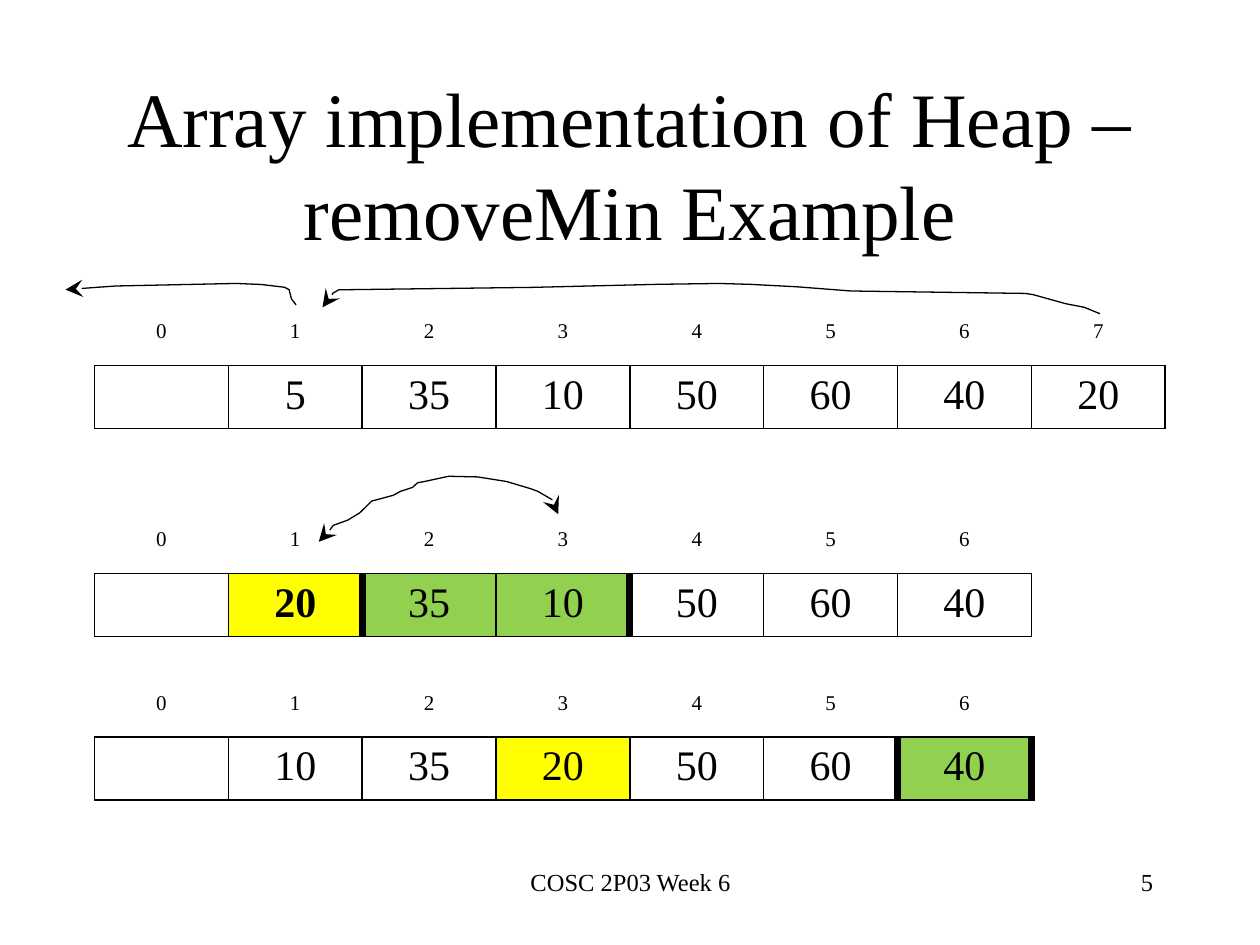
import pptx
import pptx.util
import pptx.dml.color
import pptx.enum.text
import pptx.oxml.ns
from lxml import etree

BLACK = pptx.dml.color.RGBColor(0, 0, 0)
YELLOW = pptx.dml.color.RGBColor(0xFF, 0xFF, 0)
GREEN = pptx.dml.color.RGBColor(0x92, 0xD0, 0x50)
FONT = "Times New Roman"
Align = pptx.enum.text.PP_ALIGN
Anchor = pptx.enum.text.MSO_ANCHOR
inches = pptx.util.Inches
qn = pptx.oxml.ns.qn

WIDTH, HEIGHT = 10, 7.5
MARGIN = 0.075 * WIDTH
COLUMN = (WIDTH - 2 * MARGIN) / 8
INDEX_ROW, VALUE_ROW = 0.41, 0.47
THIN, THICK = 1, 4.5


def write(frame, text, size, align, bold=False):
    para = frame.paragraphs[0]
    para.alignment = align
    span = para.add_run()
    span.text = text
    span.font.name = FONT
    span.font.size = pptx.util.Pt(size)
    span.font.bold = bold
    span.font.color.rgb = BLACK


def add_label(page, box, text, size, align, anchor=Anchor.TOP):
    shape = page.shapes.add_textbox(*map(inches, box))
    frame = shape.text_frame
    frame.word_wrap = True
    frame.vertical_anchor = anchor
    write(frame, text, size, align)


def set_border(cell, side, points):
    """Draw one side of a cell, or hide it when points is 0."""
    line = etree.SubElement(cell._tc.get_or_add_tcPr(), qn("a:ln" + side))
    line.set("w", str(pptx.util.Pt(points)))
    if points:
        fill = etree.SubElement(line, qn("a:solidFill"))
        etree.SubElement(fill, qn("a:srgbClr")).set("val", str(BLACK))
    else:
        etree.SubElement(line, qn("a:noFill"))


def paint(cell, color):
    if color is None:
        cell.fill.background()
    else:
        cell.fill.solid()
        cell.fill.fore_color.rgb = color


def add_array(page, left, top, values, fills, thick_edges=(), bold=()):
    """Indices above a row of framed values; edge n is left of column n."""
    count = len(values)
    box = (left, top, count * COLUMN, INDEX_ROW + VALUE_ROW)
    table = page.shapes.add_table(2, count, *map(inches, box)).table
    table.first_row = table.horz_banding = False
    table.rows[0].height = inches(INDEX_ROW)
    table.rows[1].height = inches(VALUE_ROW)
    for column, value in enumerate(values):
        table.columns[column].width = inches(COLUMN)
        index_cell, value_cell = table.cell(0, column), table.cell(1, column)
        for side in "LRTB":
            set_border(index_cell, side, THIN if side == "B" else 0)
            edge = {"L": column, "R": column + 1}.get(side)
            set_border(value_cell, side, THICK if edge in thick_edges else THIN)
        paint(index_cell, None)
        paint(value_cell, fills.get(column))
        write(index_cell.text_frame, str(column), 12, Align.CENTER)
        if value is not None:
            write(value_cell.text_frame, str(value), 24, Align.CENTER, column in bold)


def add_move(page, box, points, heads):
    """Curved move arrow; points are percentages of the box."""
    left, top, width, height = box
    path_points = [(inches(left + width * x / 100), inches(top + height * y / 100))
                   for x, y in points]
    builder = page.shapes.build_freeform(*path_points[0])
    builder.add_line_segments(path_points[1:], close=False)
    shape = builder.convert_to_shape()
    shape.shadow.inherit = False
    shape.fill.background()
    shape.line.color.rgb = BLACK
    shape.line.width = pptx.util.Pt(0.75)
    for end in heads:
        head = etree.SubElement(shape.line._get_or_add_ln(), qn("a:" + end))
        for name, value in (("type", "stealth"), ("w", "lg"), ("len", "lg")):
            head.set(name, value)


def add_footer(page, top, height):
    add_label(page, (3.42, top, 3.17, height), "COSC 2P03 Week 6", 14, Align.CENTER)
    add_label(page, (7.17, top, 2.08, height), "5", 14, Align.RIGHT)


def main():
    deck = pptx.Presentation()
    deck.slide_width, deck.slide_height = inches(WIDTH), inches(HEIGHT)
    page = deck.slides.add_slide(deck.slide_layouts[6])

    # Title
    add_label(page, (MARGIN, 0.67, WIDTH - 2 * MARGIN, 1.25),
              "Array implementation of Heap – removeMin Example",
              44, Align.CENTER, Anchor.MIDDLE)

    # Heap before removal, after moving the last item, and after the swap
    add_array(page, MARGIN, 2.49, [None, 5, 35, 10, 50, 60, 40, 20], {})
    add_array(page, MARGIN, 4.14, [None, 20, 35, 10, 50, 60, 40],
              {1: YELLOW, 2: GREEN, 3: GREEN}, thick_edges=(2, 4), bold=(1,))
    add_array(page, MARGIN, 5.44, [None, 10, 35, 20, 50, 60, 40],
              {3: YELLOW, 6: GREEN}, thick_edges=(6, 7))

    # Minimum leaves the heap
    add_move(page, (0.52, 2.25, 1.83, 0.17),
             [(0, 29), (14, 18), (22, 12), (74, 0), (85, 5), (95, 18),
              (97, 29), (98, 72), (100, 100)], ["headEnd"])
    # Last item goes to the root
    add_move(page, (2.56, 2.25, 6.17, 0.24),
             [(100, 100), (98, 79), (95.6, 67), (91.4, 37), (90.4, 33), (68, 25),
              (61, 11), (55, 3), (51, 0), (43, 3), (27, 13), (2.1, 21),
              (1.3, 33), (1, 54), (0, 79)], ["tailEnd"])
    # Root swaps with its smaller child
    add_move(page, (2.53, 3.78, 1.91, 0.52),
             [(0, 100), (4, 85), (6, 75), (12, 67), (17, 56), (22, 38), (31, 29),
              (34, 23), (39, 17), (41, 10), (44, 8), (54, 0), (66, 1), (78, 8),
              (88, 19), (91, 23), (98, 38), (99.5, 58)], ["headEnd", "tailEnd"])

    add_footer(page, 6.83, 0.5)
    deck.save("out.pptx")


if __name__ == "__main__":
    main()
